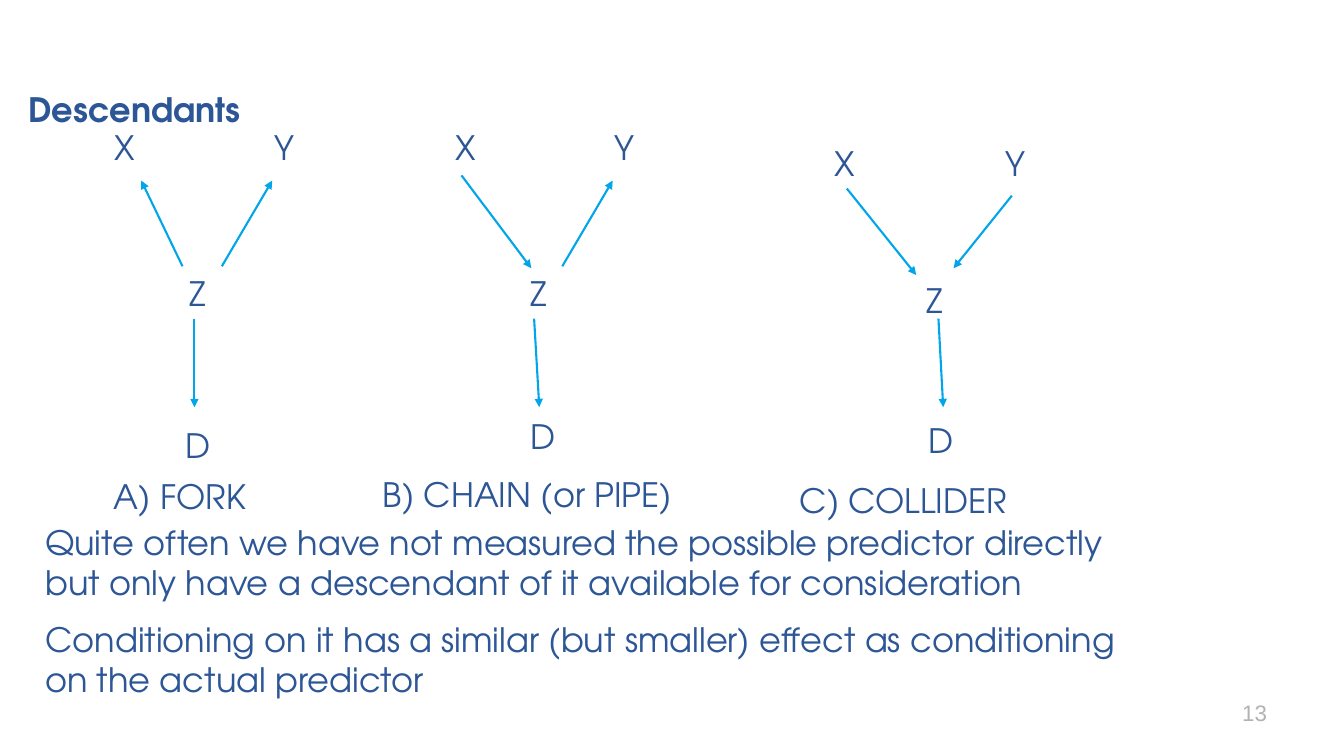
from lxml import etree
from pptx import Presentation
from pptx.dml.color import RGBColor
from pptx.enum.shapes import MSO_CONNECTOR
from pptx.enum.text import MSO_ANCHOR, MSO_AUTO_SIZE, PP_ALIGN
from pptx.oxml.ns import qn
from pptx.util import Cm, Pt

LEFT, RIGHT = PP_ALIGN.LEFT, PP_ALIGN.RIGHT
TOP, MIDDLE = MSO_ANCHOR.TOP, MSO_ANCHOR.MIDDLE
NO_FIT = MSO_AUTO_SIZE.NONE
STRAIGHT = MSO_CONNECTOR.STRAIGHT

COLORS = {"text": "2C5696", "arrow": "00A6E9", "number": "B1B3B3"}
FONT = "TeX Gyre Adventor"
LINE_H = 1.27
NODE_WIDTHS = {"X": 2.13, "Y": 1.47, "Z": 2.13, "D": 2.13}

# Positions in cm: nodes (left, top), caption (left, top, width),
# arrows (x1, y1, x2, y2)
DIAGRAMS = [
    {
        "nodes": {"X": (2.64, 3.07), "Y": (6.68, 3.07),
                  "Z": (4.52, 6.76), "D": (4.42, 10.59)},
        "caption": ("A) FORK", 2.62, 11.86, 6.78),
        "arrows": [(4.6, 6.71, 3.56, 4.55), (5.59, 6.71, 6.86, 4.55),
                   (4.9, 8.03, 4.9, 10.26)],
    },
    {
        "nodes": {"X": (11.23, 3.07), "Y": (15.24, 3.07),
                  "Z": (13.11, 6.76), "D": (13.11, 10.36)},
        "caption": ("B) CHAIN (or PIPE)", 9.4, 11.81, 9.86),
        "arrows": [(11.63, 4.42, 13.39, 6.76), (14.17, 6.71, 15.44, 4.55),
                   (13.46, 8.03, 13.59, 10.26)],
    },
    {
        "nodes": {"X": (20.78, 3.48), "Y": (25.1, 3.48),
                  "Z": (23.09, 6.93), "D": (23.16, 10.46)},
        "caption": ("C) COLLIDER", 19.91, 11.96, 6.78),
        "arrows": [(21.34, 4.75, 23.09, 6.93), (25.5, 4.93, 24.03, 6.76),
                   (23.65, 8.03, 23.77, 10.26)],
    },
]

BODY = [
    "Quite often we have not measured the possible predictor directly "
    "but only have a descendant of it available for consideration",
    "Conditioning on it has a similar (but smaller) effect as conditioning "
    "on the actual predictor",
]


def fill_text(sp, lines, size=24, font=FONT, color="text", bold=False,
              align=LEFT, anchor=TOP, gap=0):
    tf = sp.text_frame
    tf.word_wrap = True
    tf.auto_size = NO_FIT
    tf.vertical_anchor = anchor
    for i, line in enumerate(lines):
        p = tf.add_paragraph() if i else tf.paragraphs[0]
        p.text = line
        p.alignment = align
        p.space_before = Pt(gap if i else 0)
        for r in p.runs:
            r.font.name = font
            r.font.size = Pt(size)
            r.font.bold = bold
            r.font.color.rgb = RGBColor.from_string(COLORS[color])


def add_text(s, lines, left, top, width, height=LINE_H, **style):
    sp = s.shapes.add_textbox(Cm(left), Cm(top), Cm(width), Cm(height))
    fill_text(sp, lines, **style)


def add_title(s, text):
    sp = s.shapes.title
    sp.left, sp.top, sp.width, sp.height = Cm(0.46), Cm(2.11), Cm(15.34), Cm(LINE_H)
    fill_text(sp, [text], bold=True)


def add_arrow(s, *ends):
    sp = s.shapes.add_connector(STRAIGHT, *(Cm(v) for v in ends))
    sp.line.color.rgb = RGBColor.from_string(COLORS["arrow"])
    sp.line.width = Pt(1.5)
    ln = sp.line._get_or_add_ln()
    etree.SubElement(ln, qn("a:tailEnd"), type="triangle")
    etree.SubElement(sp._element.spPr, qn("a:effectLst"))


def add_diagram(s, diagram):
    for name, (left, top) in diagram["nodes"].items():
        add_text(s, [name], left, top, NODE_WIDTHS[name])
    for ends in diagram["arrows"]:
        add_arrow(s, *ends)
    caption, left, top, width = diagram["caption"]
    add_text(s, [caption], left, top, width)


def main():
    prs = Presentation()
    prs.slide_width, prs.slide_height = Cm(33.87), Cm(19.05)
    s = prs.slides.add_slide(prs.slide_layouts[5])

    # Title and the three causal diagrams
    add_title(s, "Descendants")
    for diagram in DIAGRAMS:
        add_diagram(s, diagram)

    # Explanation and slide number
    add_text(s, BODY, 0.89, 13.03, 27.84, 5.77, gap=11.5)
    add_text(s, ["13"], 28.37, 17.45, 3.81, 1.02, size=16, font="Arial",
             color="number", align=RIGHT, anchor=MIDDLE)

    prs.save("out.pptx")


if __name__ == "__main__":
    main()
